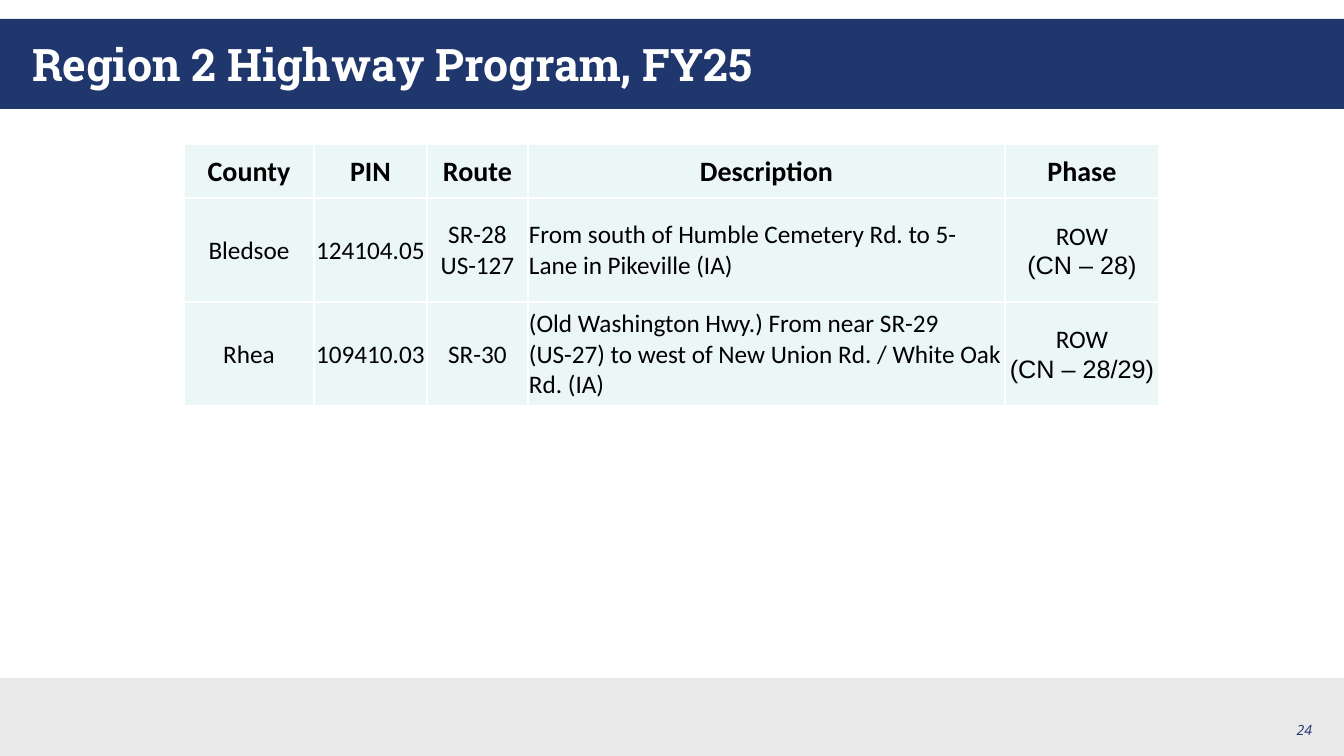
from dataclasses import dataclass

from lxml import etree
from pptx import Presentation
from pptx.dml.color import RGBColor
from pptx.enum.shapes import MSO_SHAPE
from pptx.enum.text import MSO_ANCHOR, PP_ALIGN
from pptx.oxml.ns import qn
from pptx.util import Emu, Pt

RECT = MSO_SHAPE.RECTANGLE
MIDDLE, BOTTOM = MSO_ANCHOR.MIDDLE, MSO_ANCHOR.BOTTOM
LEFT, CENTER, RIGHT = PP_ALIGN.LEFT, PP_ALIGN.CENTER, PP_ALIGN.RIGHT
SCALE = 12192000 / 1344  # EMU in one px
HUES = {"navy": "1F376D", "gray": "E9E9EA", "white": "FFFFFF",
        "black": "000000", "mint": "EBF6F7"}


@dataclass
class Box:
    x: int
    y: int
    w: int
    h: int


@dataclass
class Style:
    face: str
    size: int
    hue: str
    bold: bool = False
    slant: bool = False
    align: PP_ALIGN = LEFT


@dataclass
class Column:
    head: str
    width: int
    align: PP_ALIGN = CENTER


BANDS = [(Box(0, 19, 1344, 90), "navy"), (Box(0, 678, 1344, 78), "gray")]
COLUMNS = [Column("County", 130), Column("PIN", 113), Column("Route", 101),
           Column("Description", 477, LEFT), Column("Phase", 154)]
PROJECTS = [
    ["Bledsoe", "124104.05", "SR-28 US-127",
     "From south of Humble Cemetery Rd. to 5-Lane in Pikeville (IA)",
     "ROW\n(CN – 28)"],
    ["Rhea", "109410.03", "SR-30",
     "(Old Washington Hwy.) From near SR-29 (US-27) to west of "
     "New Union Rd. / White Oak Rd. (IA)",
     "ROW\n(CN – 28/29)"],
]
HEAD_H, ROW_H = 54, 104


def px(n: int) -> Emu:
    return Emu(round(n * SCALE))


def color(name: str) -> RGBColor:
    return RGBColor.from_string(HUES[name])


def place(shape, box: Box) -> None:
    shape.left, shape.top = px(box.x), px(box.y)
    shape.width, shape.height = px(box.w), px(box.h)


def write(frame, text: str, style: Style) -> None:
    frame.text = text
    for para in frame.paragraphs:
        para.alignment = style.align
        font = para.font
        font.name, font.size = style.face, Pt(style.size)
        font.bold, font.italic = style.bold, style.slant
        font.color.rgb = color(style.hue)


def draw_band(slide, box: Box, hue: str) -> None:
    band = slide.shapes.add_shape(RECT, 0, 0, 0, 0)
    place(band, box)
    band.shadow.inherit = False
    band.fill.solid()
    band.fill.fore_color.rgb = color(hue)
    band.line.fill.background()


def draw_title(slide, text: str) -> None:
    title = slide.shapes.title
    place(title, Box(22, 19, 1300, 90))
    write(title.text_frame, text, Style("Roboto Slab", 32, "white", bold=True))
    title.text_frame.vertical_anchor = MIDDLE
    # Bring the title in front of the bands
    slide.shapes.element.append(title.element)


def draw_page(slide, text: str) -> None:
    page = slide.shapes.add_textbox(0, 0, 0, 0)
    place(page, Box(1008, 703, 314, 40))
    frame = page.text_frame
    frame.word_wrap = True
    frame.vertical_anchor = BOTTOM
    write(frame, text, Style("Open Sans", 10, "navy", slant=True, align=RIGHT))


def edge(cell, hue: str) -> None:
    props = cell._tc.get_or_add_tcPr()
    for i, side in enumerate(("lnL", "lnR", "lnT", "lnB")):
        line = etree.Element(qn(f"a:{side}"), w=str(Pt(1)))
        fill = etree.SubElement(line, qn("a:solidFill"))
        etree.SubElement(fill, qn("a:srgbClr"), val=HUES[hue])
        props.insert(i, line)


def fill_cell(cell, text: str, style: Style) -> None:
    write(cell.text_frame, text, style)
    cell.vertical_anchor = MIDDLE
    cell.margin_left = cell.margin_right = cell.margin_top = px(1)
    cell.margin_bottom = 0
    cell.fill.solid()
    cell.fill.fore_color.rgb = color("mint")
    edge(cell, "white")


def draw_table(slide) -> None:
    rows = [[col.head for col in COLUMNS]] + PROJECTS
    width = sum(col.width for col in COLUMNS)
    high = HEAD_H + ROW_H * len(PROJECTS)
    table = slide.shapes.add_table(len(rows), len(COLUMNS), px(184), px(144),
                                   px(width), px(high)).table
    table.first_row = table.horz_banding = False
    for c, col in enumerate(COLUMNS):
        table.columns[c].width = px(col.width)
    for r, row in enumerate(rows):
        head = r == 0
        table.rows[r].height = px(HEAD_H if head else ROW_H)
        for c, (col, text) in enumerate(zip(COLUMNS, row)):
            style = Style("Calibri", 20 if head else 18, "black", bold=head,
                          align=CENTER if head else col.align)
            fill_cell(table.cell(r, c), text, style)
            # The second line of a phase is set in Arial
            for para in table.cell(r, c).text_frame.paragraphs[1:]:
                para.font.name = "Arial"


def main() -> None:
    deck = Presentation()
    deck.slide_width, deck.slide_height = px(1344), px(756)
    slide = deck.slides.add_slide(deck.slide_layouts[5])
    for box, hue in BANDS:
        draw_band(slide, box, hue)
    draw_title(slide, "Region 2 Highway Program, FY25")
    draw_page(slide, "24")
    draw_table(slide)
    deck.save("out.pptx")


if __name__ == "__main__":
    main()
